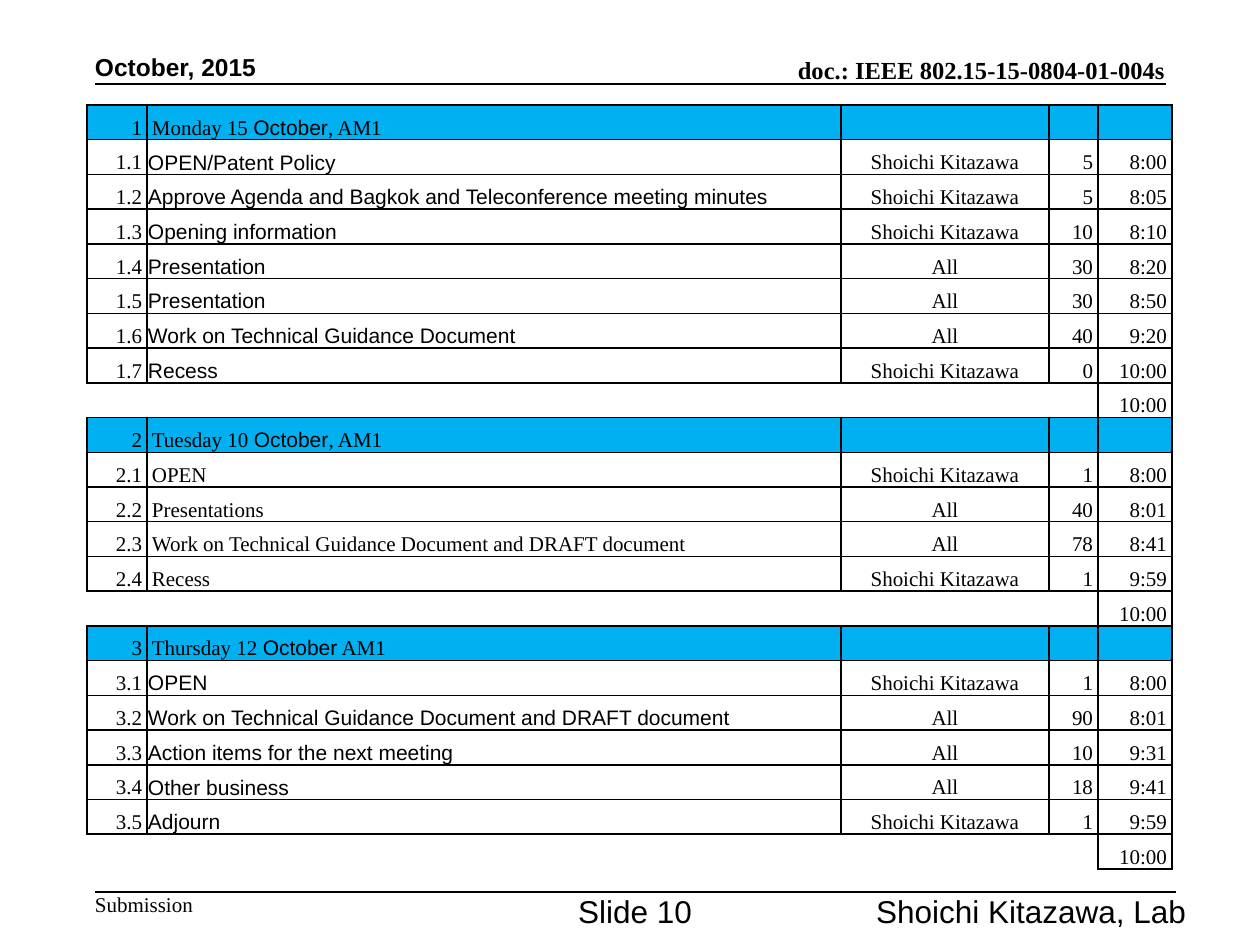
from dataclasses import dataclass
from lxml import etree
from pptx import Presentation
from pptx.dml.color import RGBColor
from pptx.enum.shapes import MSO_CONNECTOR
from pptx.enum.text import MSO_ANCHOR, MSO_AUTO_SIZE, PP_ALIGN
from pptx.oxml.ns import qn
from pptx.util import Emu, Pt

LEFT, CENTER, RIGHT = PP_ALIGN.LEFT, PP_ALIGN.CENTER, PP_ALIGN.RIGHT
TOP, BOTTOM = MSO_ANCHOR.TOP, MSO_ANCHOR.BOTTOM
STRAIGHT = MSO_CONNECTOR.STRAIGHT
GROW = MSO_AUTO_SIZE.SHAPE_TO_FIT_TEXT
EMU_PER_PX = 914400 / 126
NO_STYLE = "{2D5ABB26-0587-4C30-8999-92F81FD0307C}"


@dataclass(frozen=True)
class Theme:
    ink: str = "000000"
    band: str = "00B0F0"
    serif: str = "Times New Roman"
    sans: str = "Arial"
    header: int = 14
    table: int = 12
    footer: int = 18
    line: int = 1


THEME = Theme()
CHAIR = "Shoichi Kitazawa"
EVERYONE = "All"
START = 8 * 60
COLUMNS = [60, 694, 208, 49, 74]
ALIGNMENTS = [RIGHT, LEFT, CENTER, RIGHT, RIGHT]
TABLE_LEFT, TABLE_TOP, TABLE_HEIGHT = 87, 105, 764

# Each session: heading runs before, in and after the sans font, item font, items
SESSIONS = [
    (("Monday 15 ", "October", ", AM1"), THEME.sans, [
        ("OPEN/Patent Policy", CHAIR, 5),
        ("Approve Agenda and Bagkok and Teleconference meeting minutes", CHAIR, 5),
        ("Opening information", CHAIR, 10),
        ("Presentation", EVERYONE, 30),
        ("Presentation", EVERYONE, 30),
        ("Work on Technical Guidance Document", EVERYONE, 40),
        ("Recess", CHAIR, 0),
    ]),
    (("Tuesday 10 ", "October", ", AM1"), THEME.serif, [
        ("OPEN", CHAIR, 1),
        ("Presentations", EVERYONE, 40),
        ("Work on Technical Guidance Document and DRAFT document", EVERYONE, 78),
        ("Recess", CHAIR, 1),
    ]),
    (("Thursday 12 ", "October", " AM1"), THEME.sans, [
        ("OPEN", CHAIR, 1),
        ("Work on Technical Guidance Document and DRAFT document", EVERYONE, 90),
        ("Action items for the next meeting", EVERYONE, 10),
        ("Other business", EVERYONE, 18),
        ("Adjourn", CHAIR, 1),
    ]),
]


def px(length):
    return Emu(round(length * EMU_PER_PX))


def set_attributes(target, values):
    for name, value in values.items():
        setattr(target, name, value)


def add_run(paragraph, text, font, size, bold=False):
    run = paragraph.add_run()
    run.text = text
    set_attributes(run.font, {"name": font, "size": Pt(size), "bold": bold})
    run.font.color.rgb = RGBColor.from_string(THEME.ink)


def add_label(slide, text, box, font, size, align=LEFT, anchor=TOP, bold=False):
    shape = slide.shapes.add_textbox(*map(px, box))
    set_attributes(shape.text_frame, {
        "margin_left": 0, "margin_top": 0, "margin_right": 0, "margin_bottom": 0,
        "word_wrap": True, "vertical_anchor": anchor, "auto_size": GROW,
    })
    paragraph = shape.text_frame.paragraphs[0]
    paragraph.alignment = align
    add_run(paragraph, text, font, size, bold)


def add_rule(slide, left, right, top):
    connector = slide.shapes.add_connector(STRAIGHT, *map(px, (left, top, right, top)))
    connector.line.color.rgb = RGBColor.from_string(THEME.ink)
    connector.line.width = Pt(THEME.line)
    etree.SubElement(connector._element.spPr, qn("a:effectLst"))


def set_borders(cell, sides):
    """Draw the sides named by letters of "LRTB" and clear the others."""
    properties = cell._tc.get_or_add_tcPr()
    for side in "LRTB":
        border = etree.SubElement(properties, qn(f"a:ln{side}"), w=str(Pt(THEME.line)))
        if side in sides:
            fill = etree.SubElement(border, qn("a:solidFill"))
            etree.SubElement(fill, qn("a:srgbClr"), val=THEME.ink)
        else:
            etree.SubElement(border, qn("a:noFill"))


def fill_cell(cell, runs, align, sides, color):
    """Format a cell and write its (text, font) runs."""
    set_borders(cell, sides)
    if color:
        cell.fill.solid()
        cell.fill.fore_color.rgb = RGBColor.from_string(color)
    else:
        cell.fill.background()
    is_sans = bool(runs) and runs[0][1] == THEME.sans
    side_margin = px(1 if is_sans else 5)
    set_attributes(cell, {
        "margin_left": side_margin, "margin_right": side_margin,
        "margin_top": px(1 if is_sans else 0), "margin_bottom": 0,
        "vertical_anchor": BOTTOM,
    })
    paragraph = cell.text_frame.paragraphs[0]
    paragraph.alignment = align
    for text, font in runs:
        add_run(paragraph, text, font, THEME.table)
    if not runs:
        etree.SubElement(paragraph._p, qn("a:endParaRPr"), sz=str(THEME.table * 100))


def serif(text):
    return [(str(text), THEME.serif)]


def clock(minutes):
    return f"{minutes // 60}:{minutes % 60:02d}"


def agenda_rows():
    """Return (kind, cells) rows; start times follow from the durations."""
    rows = []
    for number, (heading, font, items) in enumerate(SESSIONS, 1):
        title = list(zip(heading, (THEME.serif, THEME.sans, THEME.serif)))
        rows.append(("heading", [serif(number), title, [], [], []]))
        time = START
        for index, (topic, owner, minutes) in enumerate(items, 1):
            rows.append(("item", [serif(f"{number}.{index}"), [(topic, font)],
                                  serif(owner), serif(minutes), serif(clock(time))]))
            time += minutes
        rows.append(("end", [[], [], [], [], serif(clock(time))]))
    return rows


def add_agenda(slide):
    rows = agenda_rows()
    frame = slide.shapes.add_table(len(rows), len(COLUMNS), *map(
        px, (TABLE_LEFT, TABLE_TOP, sum(COLUMNS), TABLE_HEIGHT)))
    table = frame.table
    set_attributes(table, {"first_row": False, "horz_banding": False})
    table._tbl.tblPr.find(qn("a:tableStyleId")).text = NO_STYLE
    for column, width in zip(table.columns, COLUMNS):
        column.width = px(width)
    last_column = len(COLUMNS) - 1
    for row_index, (kind, cells) in enumerate(rows):
        table.rows[row_index].height = px(TABLE_HEIGHT / len(rows))
        for column_index, runs in enumerate(cells):
            sides = "LRTB"
            if kind == "end" and column_index < last_column:
                sides = "T" if row_index == len(rows) - 1 else "TB"
                if column_index == last_column - 1:
                    sides += "R"
            fill_cell(table.cell(row_index, column_index), runs, ALIGNMENTS[column_index],
                      sides, THEME.band if kind == "heading" else None)


def main():
    presentation = Presentation()
    set_attributes(presentation, {"slide_width": px(1260), "slide_height": px(945)})
    slide = presentation.slides.add_slide(presentation.slide_layouts[6])
    add_label(slide, "doc.: IEEE 802.15-15-0804-01-004s", (620, 54, 545, 30),
              THEME.serif, THEME.header, RIGHT, BOTTOM, bold=True)
    add_rule(slide, 95, 1166, 84)
    add_label(slide, "Submission", (95, 892, 98, 25), THEME.serif, THEME.table)
    add_rule(slide, 95, 1176, 892)
    add_label(slide, "October, 2015", (95, 51, 220, 30),
              THEME.sans, THEME.header, anchor=BOTTOM, bold=True)
    add_label(slide, "Shoichi Kitazawa, Lab", (756, 892, 430, 25),
              THEME.sans, THEME.footer, RIGHT)
    add_label(slide, "Slide 10", (565, 892, 140, 25),
              THEME.sans, THEME.footer, CENTER)
    add_agenda(slide)
    presentation.save("out.pptx")


if __name__ == "__main__":
    main()
